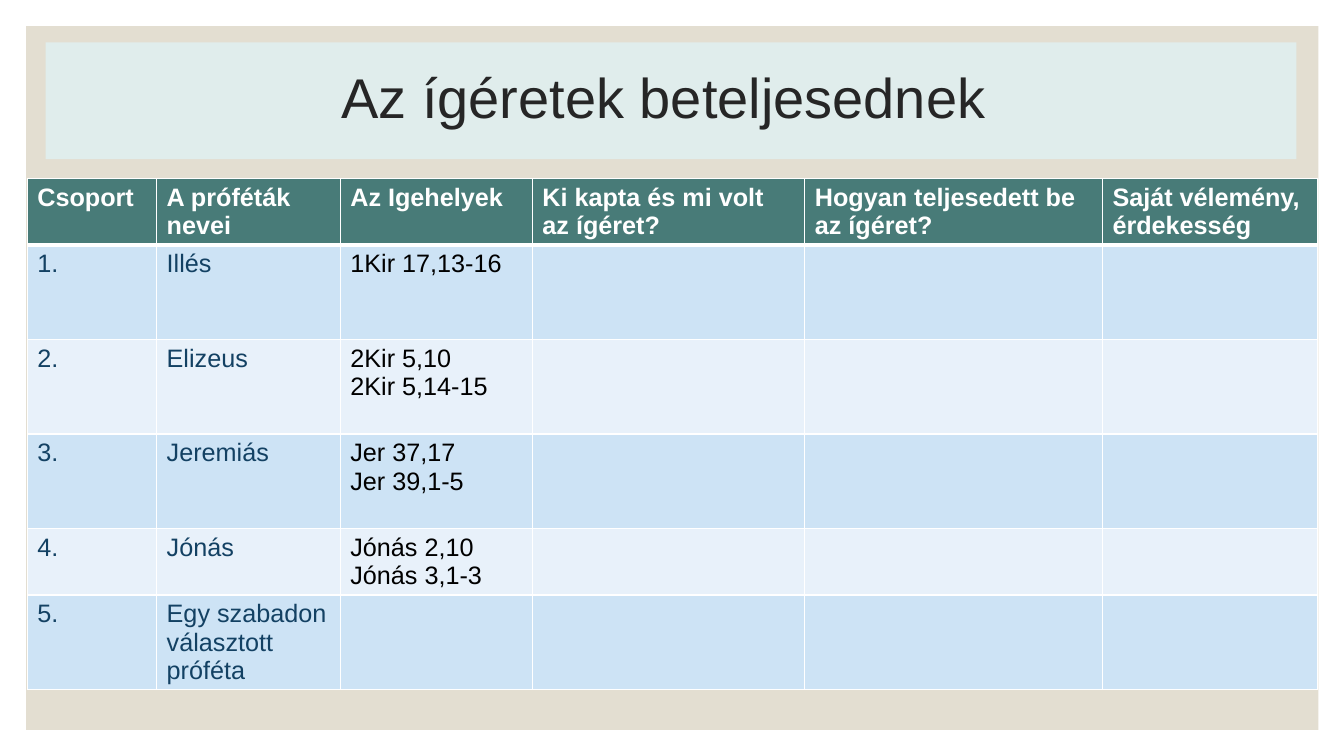
from lxml.etree import SubElement
from pptx import Presentation
from pptx.dml.color import RGBColor
from pptx.enum.shapes import MSO_SHAPE as Shape
from pptx.enum.text import MSO_ANCHOR as Anchor, PP_ALIGN as Align
from pptx.oxml.ns import qn
from pptx.util import Pt

WHITE = RGBColor(0xFF, 0xFF, 0xFF)
BLACK = RGBColor(0x00, 0x00, 0x00)
SAND = RGBColor(0xE3, 0xDE, 0xD1)
MINT = RGBColor(0xE0, 0xED, 0xEC)
CHARCOAL = RGBColor(0x26, 0x26, 0x26)
TEAL = RGBColor(0x48, 0x7B, 0x78)
NAVY = RGBColor(0x13, 0x41, 0x63)
BLUE = RGBColor(0xCD, 0xE3, 0xF5)
PALE_BLUE = RGBColor(0xE8, 0xF1, 0xFA)

HEADINGS = ["Csoport", "A próféták nevei", "Az Igehelyek",
            "Ki kapta és mi volt az ígéret?",
            "Hogyan teljesedett be az ígéret?",
            "Saját vélemény, érdekesség"]
PROPHETS = [("Illés", "1Kir 17,13-16"),
            ("Elizeus", "2Kir 5,10\n2Kir 5,14-15"),
            ("Jeremiás", "Jer 37,17\nJer 39,1-5"),
            ("Jónás", "Jónás 2,10\nJónás 3,1-3"),
            ("Egy szabadon választott próféta", "")]
COLUMN_WIDTHS = [92.4, 131.2, 137.2, 194.6, 212.6, 153.4]
ROW_HEIGHTS = [47.5, 67.5, 67.5, 67.5, 47.5, 67.5]


class SlideBuilder:
    """Holds the text style and the current slide."""

    font_name = "Arial"
    title_size = 40
    table_size = 18

    def __init__(self, slide):
        self.slide = slide

    def style(self, paragraph, size, color, bold=False):
        font = paragraph.font
        font.name, font.size, font.bold = self.font_name, Pt(size), bold
        font.color.rgb = color

    def title(self, text, left, top, width, height):
        title = self.slide.shapes.title
        title.left, title.top = Pt(left), Pt(top)
        title.width, title.height = Pt(width), Pt(height)
        title.fill.solid()
        title.fill.fore_color.rgb = MINT
        title.text_frame.text = text
        title.text_frame.vertical_anchor = Anchor.MIDDLE
        heading = title.text_frame.paragraphs[0]
        heading.alignment = Align.CENTER
        heading.line_spacing = 0.9
        self.style(heading, self.title_size, CHARCOAL)

    def backdrop(self, left, top, width, height):
        panel = self.slide.shapes.add_shape(
            Shape.RECTANGLE, Pt(left), Pt(top), Pt(width), Pt(height))
        panel.shadow.inherit = False
        panel.fill.solid()
        panel.fill.fore_color.rgb = SAND
        panel.line.fill.background()
        # Send behind the title
        self.slide.shapes.title.element.addprevious(panel.element)

    def border(self, cell, side, width):
        properties = cell._tc.get_or_add_tcPr()
        line = SubElement(properties, qn(f"a:ln{side}"), w=str(Pt(width)))
        fill = SubElement(line, qn("a:solidFill"))
        SubElement(fill, qn("a:srgbClr"), val=str(WHITE))

    def cell(self, cell, text, fill, color, bold, widths):
        for side, width in zip("LRTB", widths):
            self.border(cell, side, width)
        cell.fill.solid()
        cell.fill.fore_color.rgb = fill
        cell.text = text
        for paragraph in cell.text_frame.paragraphs:
            self.style(paragraph, self.table_size, color, bold)

    def table(self, rows, left, top, column_widths, row_heights):
        table = self.slide.shapes.add_table(
            len(rows), len(column_widths), Pt(left), Pt(top),
            Pt(sum(column_widths)), Pt(sum(row_heights))).table
        for column, width in zip(table.columns, column_widths):
            column.width = Pt(width)
        for row, height in zip(table.rows, row_heights):
            row.height = Pt(height)
        for r, row in enumerate(rows):
            header = r == 0
            fill = TEAL if header else BLUE if r % 2 else PALE_BLUE
            widths = (1, 1, 3 if r == 1 else 1, 3 if header else 1)
            for c, text in enumerate(row):
                color = WHITE if header else NAVY if c < 2 else BLACK
                self.cell(table.cell(r, c), text, fill, color, header, widths)


def main():
    presentation = Presentation()
    presentation.slide_width, presentation.slide_height = Pt(960), Pt(540)
    title_only = presentation.slide_layouts[5]
    builder = SlideBuilder(presentation.slides.add_slide(title_only))

    # Title on its backdrop
    builder.backdrop(18.7, 18.7, 923, 502.6)
    builder.title("Az ígéretek beteljesednek ", 32.6, 30.2, 893.5, 83.5)

    # Table of prophets, with three columns left to fill in
    rows = [HEADINGS]
    for number, (prophet, passages) in enumerate(PROPHETS, start=1):
        rows.append([f"{number}.", prophet, passages, "", "", ""])
    builder.table(rows, 19.5, 127.5, COLUMN_WIDTHS, ROW_HEIGHTS)

    presentation.save("out.pptx")


if __name__ == "__main__":
    main()
